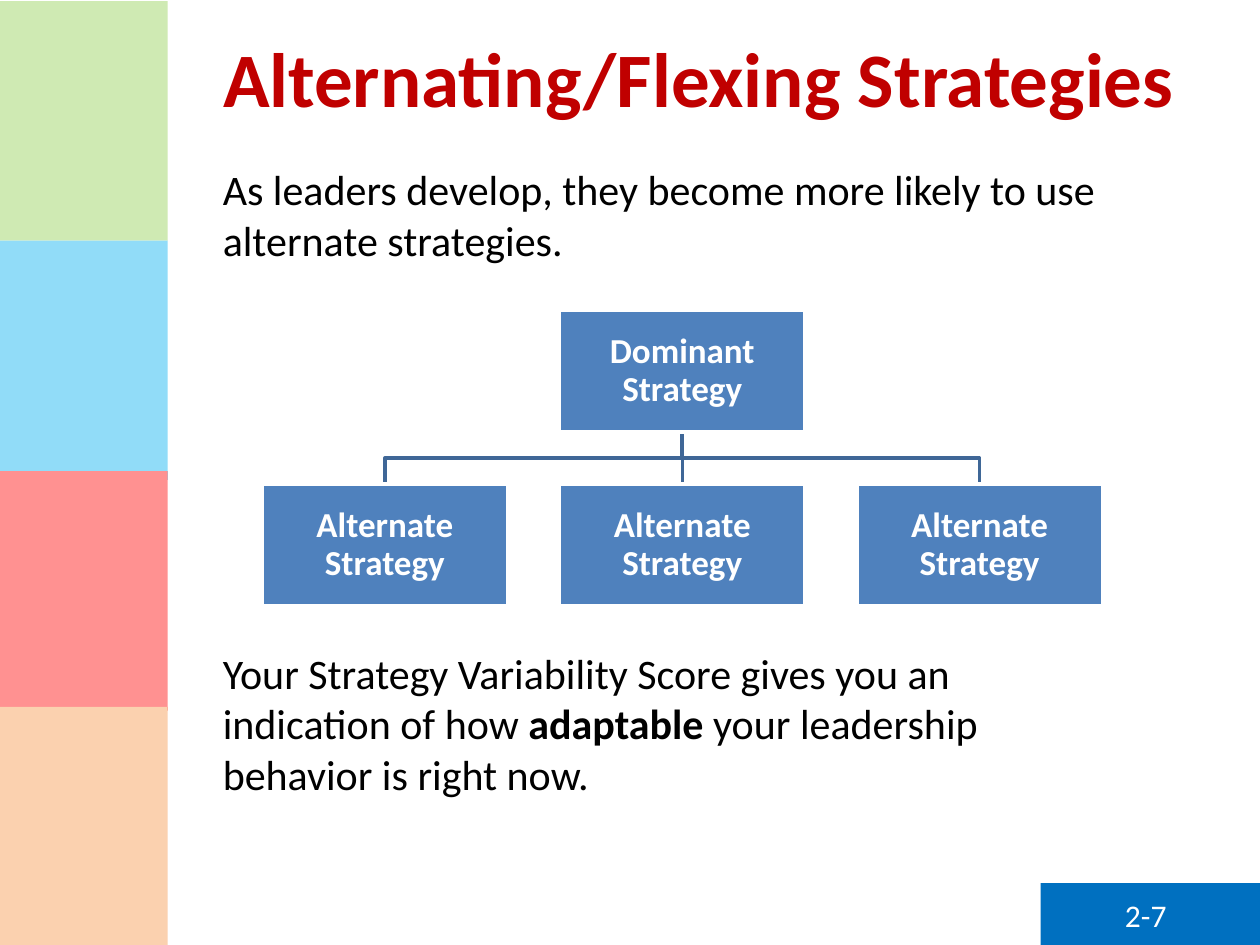
from lxml.etree import SubElement
from pptx import Presentation
from pptx.dml.color import RGBColor
from pptx.enum.shapes import MSO_CONNECTOR, MSO_SHAPE
from pptx.enum.text import MSO_ANCHOR, MSO_AUTO_SIZE, PP_ALIGN
from pptx.oxml.ns import qn
from pptx.util import Inches, Pt

COLORS = {
    "green": "92D050", "sky": "00B0F0", "red": "FF0000", "orange": "F79646",
    "footer": "0070C0", "white": "FFFFFF", "black": "000000",
    "title": "C00000", "box": "4F81BD", "branch": "3F6797",
}


class SlideBuilder:
    font_name = "Calibri"
    line_width = Pt(2)

    def __init__(self, slide):
        self.slide = slide

    def color(self, name):
        return RGBColor.from_string(COLORS[name])

    def style(self, paragraph, size, color, bold=False, align=PP_ALIGN.LEFT):
        paragraph.alignment = align
        font = paragraph.font
        font.name, font.size, font.bold = self.font_name, Pt(size), bold
        font.color.rgb = self.color(color)

    def title(self, text, left, top, width, height):
        heading = self.slide.shapes.title
        heading.left, heading.top = Inches(left), Inches(top)
        heading.width, heading.height = Inches(width), Inches(height)
        frame = heading.text_frame
        frame.text = text
        frame.auto_size = MSO_AUTO_SIZE.NONE
        frame.vertical_anchor = MSO_ANCHOR.MIDDLE
        self.style(frame.paragraphs[0], 44, "title", bold=True)

    def text(self, parts, left, top, width, height, size=24, color="black"):
        """Add one paragraph made of (wording, is_bold) parts."""
        frame = self.slide.shapes.add_textbox(
            Inches(left), Inches(top), Inches(width), Inches(height)).text_frame
        frame.word_wrap = True
        frame.auto_size = MSO_AUTO_SIZE.SHAPE_TO_FIT_TEXT
        paragraph = frame.paragraphs[0]
        self.style(paragraph, size, color)
        for wording, is_bold in parts:
            run = paragraph.add_run()
            run.text = wording
            if is_bold:
                run.font.bold = True

    def block(self, color, left, top, width, height, opacity=None):
        block = self.slide.shapes.add_shape(
            MSO_SHAPE.RECTANGLE, Inches(left), Inches(top), Inches(width), Inches(height))
        block.shadow.inherit = False
        block.fill.solid()
        block.fill.fore_color.rgb = self.color(color)
        block.line.fill.background()
        if opacity is not None:
            tint = block._element.spPr.find(qn("a:solidFill")).find(qn("a:srgbClr"))
            SubElement(tint, qn("a:alpha"), val=str(opacity * 1000))
        return block

    def strategy_box(self, text, left, top, width, height):
        box = self.block("box", left, top, width, height)
        box.line.color.rgb = self.color("white")
        box.line.width = self.line_width
        frame = box.text_frame
        frame.text = text
        frame.word_wrap = True
        frame.vertical_anchor = MSO_ANCHOR.MIDDLE
        frame.margin_left = frame.margin_right = Inches(0.01)
        frame.margin_top = frame.margin_bottom = Inches(0.01)
        paragraph = frame.paragraphs[0]
        self.style(paragraph, 20, "white", bold=True, align=PP_ALIGN.CENTER)
        paragraph.line_spacing = 0.9
        return box

    def bent_branch(self, start_x, start_y, end_x, end_y):
        """Draw a line that goes down, across and down again."""
        middle_y = (start_y + end_y) / 2
        corners = [(start_x, middle_y), (end_x, middle_y), (end_x, end_y)]
        builder = self.slide.shapes.build_freeform(Inches(start_x), Inches(start_y))
        builder.add_line_segments([(Inches(x), Inches(y)) for x, y in corners], close=False)
        branch = builder.convert_to_shape()
        branch.shadow.inherit = False
        branch.fill.background()
        branch.line.color.rgb = self.color("branch")
        branch.line.width = self.line_width

    def straight_branch(self, x, start_y, end_y):
        branch = self.slide.shapes.add_connector(
            MSO_CONNECTOR.STRAIGHT, Inches(x), Inches(start_y), Inches(x), Inches(end_y))
        branch.line.color.rgb = self.color("branch")
        branch.line.width = self.line_width
        SubElement(branch._element.spPr, qn("a:effectLst"))
        return branch


def add_strategy_tree(builder):
    width, height, pitch = 1.95, 0.97, 2.36
    left, dominant_top, alternate_top = 2.08, 2.46, 3.84
    lefts = [left + column * pitch for column in range(3)]
    first_x, middle_x, last_x = [edge + width / 2 for edge in lefts]
    start_y = dominant_top + height

    builder.bent_branch(middle_x, start_y, last_x, alternate_top)
    trunk = builder.straight_branch(middle_x, start_y, alternate_top)
    builder.bent_branch(middle_x, start_y, first_x, alternate_top)

    dominant = builder.strategy_box(
        "Dominant\vStrategy", lefts[1], dominant_top, width, height)
    alternates = [
        builder.strategy_box("Alternate\vStrategy", edge, alternate_top, width, height)
        for edge in lefts]
    trunk.begin_connect(dominant, 2)
    trunk.end_connect(alternates[1], 0)


def main():
    presentation = Presentation()
    presentation.slide_width, presentation.slide_height = Inches(10), Inches(7.5)
    title_only = presentation.slide_layouts[5]
    builder = SlideBuilder(presentation.slides.add_slide(title_only))

    bands = [("green", 0.01), ("sky", 1.91), ("red", 3.74), ("orange", 5.61)]
    for color, top in bands:
        builder.block(color, 0, top, 1.33, 1.9)
    builder.block("footer", 8.26, 7.01, 1.75, 0.5)
    builder.block("white", 0, 0, 1.33, 7.5, opacity=57)

    builder.title("Alternating/Flexing Strategies", 1.67, 0.17, 7.83, 0.87)
    builder.text([("2-7", False)], 8.83, 7.06, 0.75, 0.4, size=18, color="white")
    add_strategy_tree(builder)
    builder.text(
        [("As leaders develop, they become more likely to use alternate strategies.", False)],
        1.67, 1.25, 7.17, 0.91)
    builder.text(
        [("Your Strategy Variability Score gives you an indication of how ", False),
         ("adaptable", True),
         (" your leadership behavior is right now.", False)],
        1.67, 5.09, 7.17, 1.31)

    presentation.save("out.pptx")


if __name__ == "__main__":
    main()
